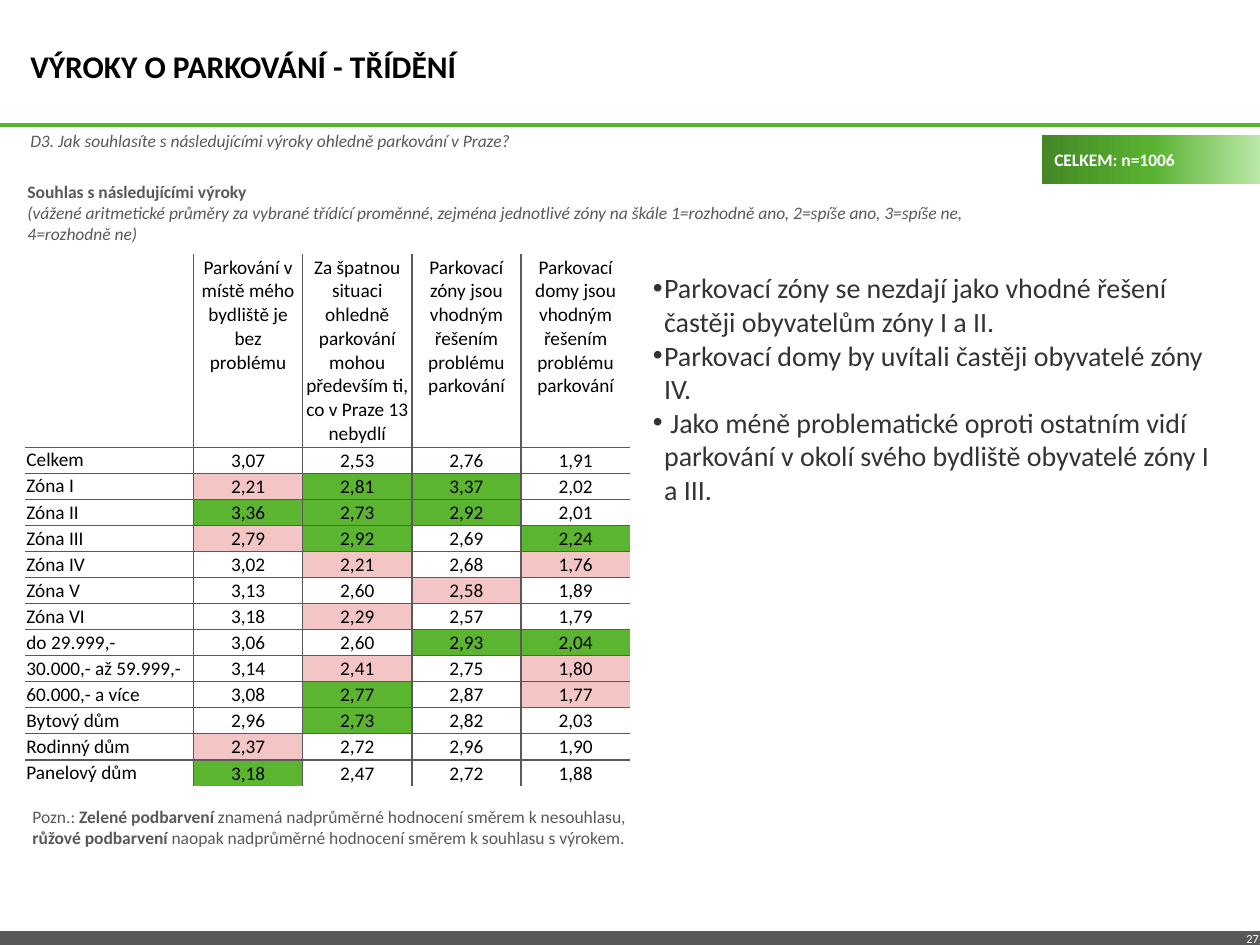
from dataclasses import dataclass

from lxml.etree import SubElement
from pptx import Presentation
from pptx.dml.color import RGBColor
from pptx.enum.shapes import MSO_CONNECTOR as Connector, MSO_SHAPE as Shape
from pptx.enum.text import MSO_ANCHOR as Anchor, MSO_AUTO_SIZE as AutoSize, PP_ALIGN as Align
from pptx.oxml.ns import qn
from pptx.util import Pt

GREEN, PINK, GREY, BLACK, WHITE = "5BB531", "F3C6C5", "595959", "000000", "FFFFFF"
DARK = "333333"
BADGE_STOPS = {0: "448825", 50: "58B230", 100: "BBE7A7"}


@dataclass
class Span:
    text: str
    bold: bool = False
    italic: bool = False


@dataclass
class Area:
    left: float
    top: float
    width: float
    height: float

    def lengths(self) -> list:
        return [Pt(value) for value in (self.left, self.top, self.width, self.height)]


@dataclass
class Rule:
    y: float
    color: str
    weight: float


@dataclass
class Row:
    label: str
    values: str
    marks: str  # one letter per value: g green, p pink, - plain


def rgb(color: str) -> RGBColor:
    return RGBColor.from_string(color)


def write(frame, paragraphs: list, size: float, color: str, align=Align.LEFT,
          anchor=Anchor.TOP, margins=(7.2, 3.6, 7.2, 3.6), bullet: str = "", indent: float = 0):
    """Fill a text frame; each paragraph is a list of spans."""
    settings = dict(word_wrap=True, auto_size=AutoSize.NONE, vertical_anchor=anchor)
    sides = ("margin_left", "margin_top", "margin_right", "margin_bottom")
    settings.update(zip(sides, map(Pt, margins)))
    for name, value in settings.items():
        setattr(frame, name, value)
    for index, spans in enumerate(paragraphs):
        para = frame.add_paragraph() if index else frame.paragraphs[0]
        para.alignment = align
        para.space_before = Pt(0)
        properties = para._p.get_or_add_pPr()
        properties.set("marL", str(Pt(indent)))
        properties.set("indent", str(-Pt(indent)))
        if bullet:
            SubElement(properties, qn("a:buChar")).set("char", bullet)
        else:
            SubElement(properties, qn("a:buNone"))
        for span in spans:
            run = para.add_run()
            run.text = span.text
            look = dict(name="Calibri", size=Pt(size), bold=span.bold, italic=span.italic)
            for name, value in look.items():
                setattr(run.font, name, value)
            run.font.color.rgb = rgb(color)


def place(shape, area: Area):
    shape.left, shape.top, shape.width, shape.height = area.lengths()
    return shape.text_frame


def add_text(page, area: Area, paragraphs: list, size: float, color: str, **options):
    box = page.shapes.add_textbox(*area.lengths())
    write(box.text_frame, paragraphs, size, color, **options)


def add_rule(page, rule: Rule):
    line = page.shapes.add_connector(Connector.STRAIGHT, 0, Pt(rule.y), Pt(720), Pt(rule.y))
    line.line.color.rgb = rgb(rule.color)
    line.line.width = Pt(rule.weight)
    SubElement(line._element.spPr, qn("a:effectLst"))


def add_badge(page, area: Area, text: str):
    badge = page.shapes.add_shape(Shape.RECTANGLE, *area.lengths())
    badge.shadow.inherit = False
    badge.line.fill.background()
    badge.fill.gradient()
    badge.fill.gradient_angle = 0
    stops = badge._element.spPr.find(".//" + qn("a:gsLst"))
    stops.clear()
    for percent, color in BADGE_STOPS.items():
        stop = SubElement(stops, qn("a:gs"), pos=str(percent * 1000))
        SubElement(stop, qn("a:srgbClr"), val=color)
    write(badge.text_frame, [[Span(text, bold=True)]], 10, WHITE, anchor=Anchor.MIDDLE)


def set_borders(cell, drawn: dict):
    """Draw the named sides of a cell and clear the others."""
    properties = cell._tc.get_or_add_tcPr()
    for side, visible in drawn.items():
        line = SubElement(properties, qn("a:ln" + side), w=str(Pt(1)))
        if visible:
            fill = SubElement(line, qn("a:solidFill"))
            SubElement(fill, qn("a:srgbClr"), val=GREY)
        else:
            SubElement(line, qn("a:noFill"))


def add_results(page, area: Area, headings: list, rows: list):
    label_width, value_width, head_height, row_height = 96.2, 62.4, 110.2, 14.9
    grid = [[""] + headings] + [[row.label] + row.values.split() for row in rows]
    marks = ["-----"] + ["-" + row.marks for row in rows]
    last_row, last_column = len(grid) - 1, len(headings)
    table = page.shapes.add_table(len(grid), len(grid[0]), *area.lengths()).table
    table.first_row = table.horz_banding = False
    for index, column in enumerate(table.columns):
        column.width = Pt(value_width if index else label_width)
    for index, row in enumerate(table.rows):
        row.height = Pt(row_height if index else head_height)
    for r, texts in enumerate(grid):
        for c, text in enumerate(texts):
            cell = table.cell(r, c)
            set_borders(cell, {"L": c > 0, "R": c < last_column, "T": r > 0, "B": r < last_row})
            mark = marks[r][c]
            if mark == "-":
                cell.fill.background()
            else:
                cell.fill.solid()
                cell.fill.fore_color.rgb = rgb({"g": GREEN, "p": PINK}[mark])
            for side in ("left", "top", "right", "bottom"):
                setattr(cell, "margin_" + side, Pt(0 if side == "bottom" else 0.7))
            cell.vertical_anchor = Anchor.MIDDLE if r and c else Anchor.TOP
            para = cell.text_frame.paragraphs[0]
            para.alignment = Align.CENTER if c else Align.LEFT
            para.text = text
            para.font.name, para.font.size = "Calibri", Pt(11)
            para.font.color.rgb = rgb(BLACK)


HEADINGS = [
    "Parkování v místě mého bydliště je bez problému",
    "Za špatnou situaci ohledně parkování mohou především ti, co v Praze 13 nebydlí",
    "Parkovací zóny jsou vhodným řešením problému parkování",
    "Parkovací domy jsou vhodným řešením problému parkování",
]
ROWS = [
    Row("Celkem", "3,07 2,53 2,76 1,91", "----"),
    Row("Zóna I", "2,21 2,81 3,37 2,02", "pgg-"),
    Row("Zóna II", "3,36 2,73 2,92 2,01", "ggg-"),
    Row("Zóna III", "2,79 2,92 2,69 2,24", "pg-g"),
    Row("Zóna IV", "3,02 2,21 2,68 1,76", "-p-p"),
    Row("Zóna V", "3,13 2,60 2,58 1,89", "--p-"),
    Row("Zóna VI", "3,18 2,29 2,57 1,79", "-p--"),
    Row("do 29.999,-", "3,06 2,60 2,93 2,04", "--gg"),
    Row("30.000,- až 59.999,-", "3,14 2,41 2,75 1,80", "-p-p"),
    Row("60.000,- a více", "3,08 2,77 2,87 1,77", "-g-p"),
    Row("Bytový dům", "2,96 2,73 2,82 2,03", "-g--"),
    Row("Rodinný dům", "2,37 2,72 2,96 1,90", "p---"),
    Row("Panelový dům", "3,18 2,47 2,72 1,88", "g---"),
]
FINDINGS = [
    "Parkovací zóny se nezdají jako vhodné řešení častěji obyvatelům zóny I a II.",
    "Parkovací domy by uvítali častěji obyvatelé zóny IV.",
    " Jako méně problematické oproti ostatním vidí parkování v okolí svého bydliště "
    "obyvatelé zóny I a III.",
]
QUESTION = "D3. Jak souhlasíte s následujícími výroky ohledně parkování v Praze?"
SCALE = ("(vážené aritmetické průměry za vybrané třídící proměnné, zejména jednotlivé zóny "
         "na škále 1=rozhodně ano, 2=spíše ano, 3=spíše ne, 4=rozhodně ne)")
NOTE = [Span("Pozn.: "), Span("Zelené podbarvení ", bold=True),
        Span("znamená nadprůměrné hodnocení směrem k nesouhlasu, "),
        Span("růžové podbarvení ", bold=True),
        Span("naopak nadprůměrné hodnocení směrem k souhlasu s výrokem.")]


def main():
    deck = Presentation()
    deck.slide_width, deck.slide_height = Pt(720), Pt(540)
    page = deck.slides.add_slide(deck.slide_layouts[3])
    title, question, findings = page.placeholders

    # Rules and page number
    for rule in (Rule(71.3, GREEN, 2), Rule(536.4, GREY, 9)):
        add_rule(page, rule)
    add_text(page, Area(694.8, 532.1, 24.5, 5.8), [[Span("27")]], 7, WHITE,
             align=Align.RIGHT, margins=(0, 0, 0, 0))

    # Title, question and findings
    narrow = (2.9, 0, 2.9, 0)
    write(place(title, Area(14.4, 9.4, 566.6, 56.9)),
          [[Span("VÝROKY O PARKOVÁNÍ - TŘÍDĚNÍ", bold=True)]], 18, BLACK,
          anchor=Anchor.MIDDLE, margins=narrow)
    write(place(question, Area(14.4, 74.2, 578.2, 12.2)), [[Span(QUESTION, italic=True)]],
          10, GREY, margins=narrow)
    write(place(findings, Area(365.8, 151.2, 340.6, 162.7)), [[Span(text)] for text in FINDINGS],
          16, DARK, bullet="•", indent=6.5)

    # Sample size, table and its captions
    add_badge(page, Area(595.4, 77, 124.6, 28.1), "CELKEM: n=1006")
    add_results(page, Area(14.4, 145.4, 345.8, 303.9), HEADINGS, ROWS)
    add_text(page, Area(8.6, 100.1, 583.9, 43.9),
             [[Span("Souhlas s následujícími výroky", bold=True)], [Span(SCALE, italic=True)]],
             10, GREY)
    add_text(page, Area(11.5, 457.2, 371.5, 31.7), [NOTE], 10, GREY)

    deck.save("out.pptx")


if __name__ == "__main__":
    main()
